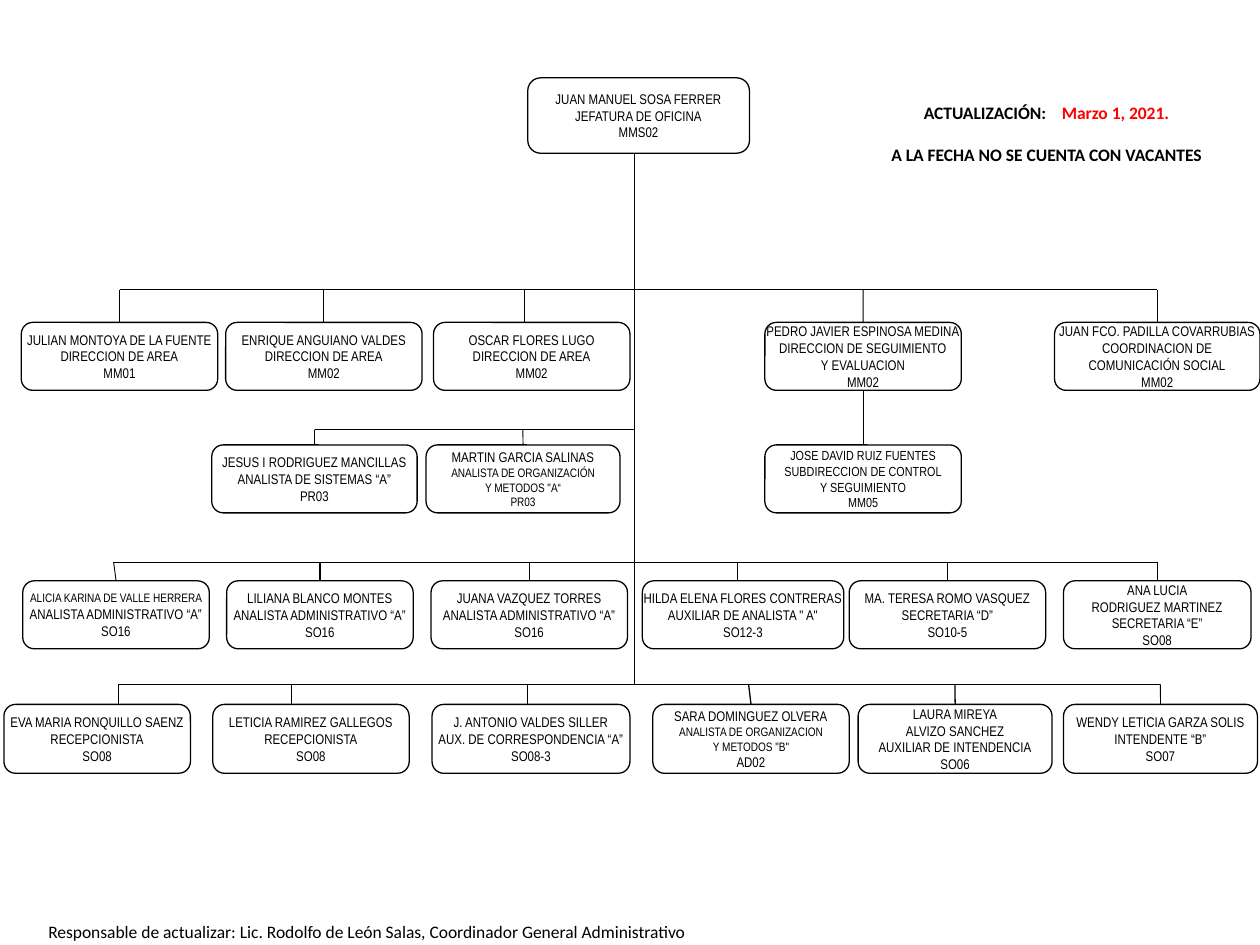
from lxml.etree import SubElement
from pptx import Presentation
from pptx.dml.color import RGBColor
from pptx.enum.shapes import MSO_CONNECTOR as Link, MSO_SHAPE as Shape
from pptx.enum.text import MSO_ANCHOR as Anchor, PP_ALIGN as Align
from pptx.oxml.ns import qn
from pptx.util import Cm, Pt

BLACK = RGBColor(0, 0, 0)
WHITE = RGBColor(255, 255, 255)
RED = RGBColor(255, 0, 0)

FRAME = {"word_wrap": False, "vertical_anchor": Anchor.MIDDLE, "margin_left": 0,
         "margin_right": 0, "margin_top": 0, "margin_bottom": 0}
TRUNK = 12.78
NEAR = 0.06

# Lines of a box that are set smaller than 8 points
SMALL = {
    "ALICIA KARINA DE VALLE HERRERA": 7,
    "ANALISTA DE ORGANIZACIÓN": 7, "Y METODOS \"A“": 7, "PR03": 7,
    "ANALISTA DE ORGANIZACION": 7, "Y METODOS \"B\"": 7,
    "JOSE DAVID RUIZ FUENTES": 7.5, "SUBDIRECCION DE CONTROL": 7.5,
    "Y SEGUIMIENTO": 7.5, "MM05": 7.5,
}

# Row: bar height, box top, box height, inner line weight, boxes
# Box: left, width, x of its drop line, text lines
ROWS = [
    (5.84, 6.5, 1.37, 0.5, [
        (0.43, 3.96, 2.41, ["JULIAN MONTOYA DE LA FUENTE", "DIRECCION DE AREA", "MM01"]),
        (4.55, 3.96, 6.53, ["ENRIQUE ANGUIANO VALDES", "DIRECCION DE AREA", "MM02"]),
        (8.74, 3.96, 10.57, ["OSCAR FLORES LUGO", "DIRECCION DE AREA", "MM02"]),
        (15.42, 3.96, 17.4, ["PEDRO JAVIER ESPINOSA MEDINA", "DIRECCION DE SEGUIMIENTO",
                             "Y EVALUACION", "MM02"]),
        (21.26, 4.14, 23.33, ["JUAN FCO. PADILLA COVARRUBIAS", "COORDINACION DE",
                              "COMUNICACIÓN SOCIAL", "MM02"]),
    ]),
    (8.66, 8.97, 1.37, 0.5, [
        (4.27, 4.14, 6.34, ["JESUS I RODRIGUEZ MANCILLAS", "ANALISTA DE SISTEMAS “A”",
                            "PR03"]),
        (8.59, 3.91, 10.54, ["MARTIN GARCIA SALINAS", "ANALISTA DE ORGANIZACIÓN",
                             "Y METODOS \"A“", "PR03"]),
        (15.42, 3.96, None, ["JOSE DAVID RUIZ FUENTES", "SUBDIRECCION DE CONTROL",
                             "Y SEGUIMIENTO", "MM05"]),
    ]),
    (11.33, 11.71, 1.37, 0.75, [
        (0.46, 3.76, 2.29, ["ALICIA KARINA DE VALLE HERRERA",
                            "ANALISTA ADMINISTRATIVO “A”", "SO16"]),
        (4.57, 3.76, 6.45, ["LILIANA BLANCO MONTES", "ANALISTA ADMINISTRATIVO “A”", "SO16"]),
        (8.69, 3.96, 10.67, ["JUANA VAZQUEZ TORRES", "ANALISTA ADMINISTRATIVO “A”", "SO16"]),
        (12.95, 4.06, 14.86, ["HILDA ELENA FLORES CONTRERAS", "AUXILIAR DE ANALISTA \" A\"",
                              "SO12-3"]),
        (17.12, 3.96, 19.1, ["MA. TERESA ROMO VASQUEZ", "SECRETARIA “D”", "SO10-5"]),
        (21.44, 3.78, 23.33, ["ANA LUCIA", "RODRIGUEZ MARTINEZ", "SECRETARIA “E”", "SO08"]),
    ]),
    (13.79, 14.2, 1.39, 0.75, [
        (0.08, 3.76, 2.39, ["EVA MARIA RONQUILLO SAENZ", "RECEPCIONISTA", "SO08"]),
        (4.29, 3.96, 5.87, ["LETICIA RAMIREZ GALLEGOS", "RECEPCIONISTA", "SO08"]),
        (8.71, 3.99, 10.64, ["J. ANTONIO VALDES SILLER", "AUX. DE CORRESPONDENCIA “A”",
                             "SO08-3"]),
        (13.16, 3.96, 15.09, ["SARA DOMINGUEZ OLVERA", "ANALISTA DE ORGANIZACION",
                              "Y METODOS \"B\"", "AD02"]),
        (17.3, 3.91, 19.25, ["LAURA MIREYA", "ALVIZO SANCHEZ", "AUXILIAR DE INTENDENCIA",
                             "SO06"]),
        (21.44, 3.91, 23.39, ["WENDY LETICIA GARZA SOLIS", "INTENDENTE “B”", "SO07"]),
    ]),
]

deck = Presentation()
deck.slide_width, deck.slide_height = Cm(25.4), Cm(19.05)
slide = deck.slides.add_slide(deck.slide_layouts[6])
shapes = slide.shapes


def write(para, text, color=BLACK, **look):
    """Add a centred run with the given font values."""
    para.alignment = Align.CENTER
    run = para.add_run()
    run.text = text
    run.font.color.rgb = color
    for key, val in look.items():
        setattr(run.font, key, val)
    return run


def draw(x1, y1, x2, y2, weight=0.5):
    line = shapes.add_connector(Link.STRAIGHT, Cm(x1), Cm(y1), Cm(x2), Cm(y2))
    line.line.color.rgb = BLACK
    line.line.width = Pt(weight)
    SubElement(line._element.spPr, qn("a:effectLst"))
    return line


# Trunk and bars lie behind the boxes
draw(TRUNK, 2.5, TRUNK, ROWS[-1][0])
for bar, top, high, weight, staff in ROWS:
    drops = [x for left, wide, x, lines in staff if x]
    draw(drops[0], bar, max(drops[-1], TRUNK), bar)

# Boxes, the head of office first, each with its drop line
boxes = {}
head = (10.64, 4.47, None, ["JUAN MANUEL SOSA FERRER", "JEFATURA DE OFICINA", "MMS02"])
for bar, top, high, weight, staff in [(0, 1.57, 1.52, 0.5, [head])] + ROWS:
    for left, wide, x, lines in staff:
        box = shapes.add_shape(Shape.ROUNDED_RECTANGLE, Cm(left), Cm(top), Cm(wide), Cm(high))
        box.shadow.inherit = False
        box.adjustments[0] = 0.17
        box.fill.solid()
        box.fill.fore_color.rgb = WHITE
        box.line.color.rgb = BLACK
        box.line.width = Pt(0.75)
        frame = box.text_frame
        for key, val in FRAME.items():
            setattr(frame, key, val)
        for i, text in enumerate(lines):
            para = frame.add_paragraph() if i else frame.paragraphs[0]
            size = SMALL.get(text, 8)
            if text == "PR03" and len(lines) == 3:
                size = 8
            write(para, text, name="Arial Narrow", size=Pt(size))
        boxes[lines[0]] = box
        if x:
            outer = x in (staff[0][2], staff[-1][2])
            drop = draw(x, bar, x, top, 0.5 if outer else weight)
            if abs(x - left - wide / 2) < NEAR:
                drop.end_connect(box, 0)

# Pedro's own deputy
link = draw(17.4, 7.87, 17.4, 8.97)
link.begin_connect(boxes["PEDRO JAVIER ESPINOSA MEDINA"], 2)
link.end_connect(boxes["JOSE DAVID RUIZ FUENTES"], 0)

# Update note
look = {"name": "Calibri", "size": Pt(10), "bold": True}
note = shapes.add_textbox(Cm(16.74), Cm(1.93), Cm(8.71), Cm(1.55)).text_frame
note.word_wrap = True
date = note.paragraphs[0]
write(date, "ACTUALIZACIÓN:", **look)
gap = write(date, " ", **look)
gap.font._element.set("spc", "675")
write(date, "Marzo 1, 2021.", RED, **look)
state = note.add_paragraph()
state.space_before = Pt(12)
write(state, "A LA FECHA NO SE CUENTA CON VACANTES", **look)

# Footer
foot = shapes.add_textbox(Cm(-0.51), Cm(18.44), Cm(15.8), Cm(0.69)).text_frame
foot.word_wrap = True
write(foot.paragraphs[0], "Responsable de actualizar: Lic. Rodolfo de León Salas, "
      "Coordinador General Administrativo", name="Calibri", size=Pt(10))

deck.save("out.pptx")
